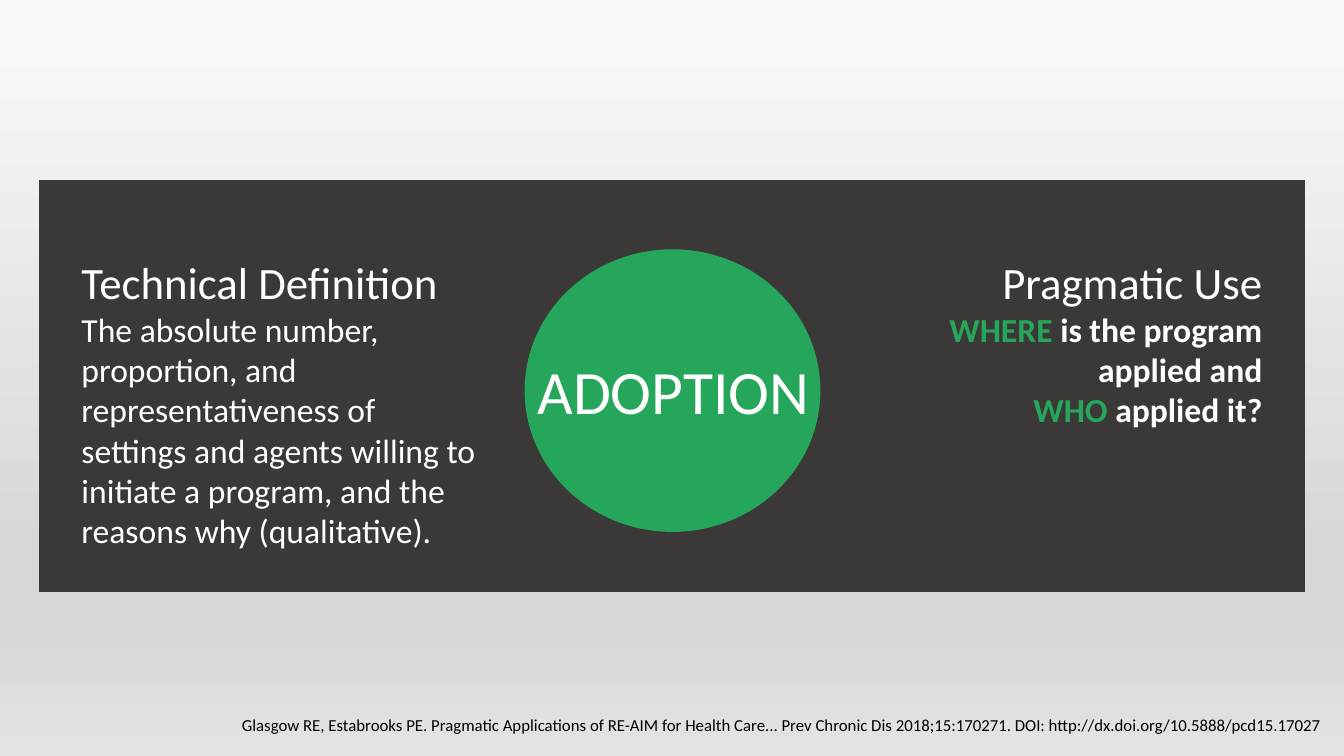
from lxml.etree import SubElement
from pptx import Presentation
from pptx.dml.color import RGBColor
from pptx.enum.shapes import MSO_SHAPE as Shape
from pptx.enum.text import MSO_ANCHOR as Anchor, MSO_AUTO_SIZE as AutoSize, PP_ALIGN as Align
from pptx.oxml.ns import qn
from pptx.util import Inches, Pt

COLORS = {
    "panel": "3B3838",
    "green": "26A65B",
    "white": "FFFFFF",
    "black": "000000",
}
BACKGROUND_STOPS = [(0, "FAFAFA"), (74, "D7D7D7"), (83, "D7D7D7"), (100, "E4E4E4")]


def add_run(paragraph, text, size=24, color="white", bold=False):
    run = paragraph.add_run()
    run.text = text
    run.font.name = "Calibri"
    run.font.size = Pt(size)
    run.font.bold = bold
    run.font.color.rgb = RGBColor.from_string(COLORS[color])


def fill_frame(frame, paragraphs, align=Align.LEFT):
    """Fill a text frame with paragraphs, each a list of (text, format) runs."""
    frame.word_wrap = True
    frame.auto_size = AutoSize.NONE
    frame.vertical_anchor = Anchor.TOP
    for index, runs in enumerate(paragraphs):
        paragraph = frame.add_paragraph() if index else frame.paragraphs[0]
        paragraph.alignment = align
        for text, style in runs:
            add_run(paragraph, text, **style)


class SlideBuilder:
    def __init__(self, presentation):
        self.slide = presentation.slides.add_slide(presentation.slide_layouts[5])

    def background(self, stops):
        """Fill the background from top to bottom with (percent, hex) stops."""
        fill = self.slide.background.fill
        fill.gradient()
        fill.gradient_angle = 270
        stop_list = next(self.slide.element.iter(qn("a:gsLst")))
        for stop in list(stop_list):
            stop_list.remove(stop)
        for percent, color in stops:
            stop = SubElement(stop_list, qn("a:gs"), pos=str(percent * 1000))
            SubElement(stop, qn("a:srgbClr"), val=color)

    def block(self, kind, left, top, width, height, color):
        shape = self.slide.shapes.add_shape(
            kind, Inches(left), Inches(top), Inches(width), Inches(height))
        shape.shadow.inherit = False
        shape.fill.solid()
        shape.fill.fore_color.rgb = RGBColor.from_string(COLORS[color])
        shape.line.color.rgb = RGBColor.from_string(COLORS[color])
        shape.line.width = Pt(1)

    def title(self, left, top, width, height, text, size):
        shape = self.slide.shapes.title
        # The title lies on the circle, so it goes to the front.
        shape.element.getparent().append(shape.element)
        shape.left, shape.top = Inches(left), Inches(top)
        shape.width, shape.height = Inches(width), Inches(height)
        fill_frame(shape.text_frame, [[(text, {"size": size})]])

    def text(self, left, top, width, height, paragraphs, align=Align.LEFT):
        box = self.slide.shapes.add_textbox(
            Inches(left), Inches(top), Inches(width), Inches(height))
        fill_frame(box.text_frame, paragraphs, align)


def main():
    presentation = Presentation()
    presentation.slide_width = Inches(13.33)
    presentation.slide_height = Inches(7.5)

    builder = SlideBuilder(presentation)
    builder.background(BACKGROUND_STOPS)
    builder.block(Shape.RECTANGLE, 0.39, 1.79, 12.55, 4.08, "panel")
    builder.block(Shape.OVAL, 5.21, 2.48, 2.92, 2.79, "green")
    builder.title(5.23, 3.45, 3.22, 0.84, "ADOPTION", size=44)

    heading = {"size": 32}
    strong = {"bold": True}
    accent = {"bold": True, "color": "green"}
    builder.text(0.71, 2.48, 4.17, 3.06, [
        [("Technical Definition", heading)],
        [("The absolute number, proportion, and representativeness of settings and "
          "agents willing to initiate a program, and the reasons why (qualitative).", {})],
    ])
    builder.text(8.45, 2.48, 4.17, 1.85, [
        [("Pragmatic Use", heading)],
        [("WHERE ", accent), ("is the program applied and", strong)],
        [("WHO ", accent), ("applied it?", strong)],
    ], align=Align.RIGHT)
    builder.text(2.3, 7.04, 11, 0.3, [
        [("Glasgow RE, Estabrooks PE. Pragmatic Applications of RE-AIM for Health Care... "
          "Prev Chronic Dis 2018;15:170271. DOI: http://dx.doi.org/10.5888/pcd15.17027",
          {"size": 12, "color": "black"})],
    ])
    presentation.save("out.pptx")


if __name__ == "__main__":
    main()
